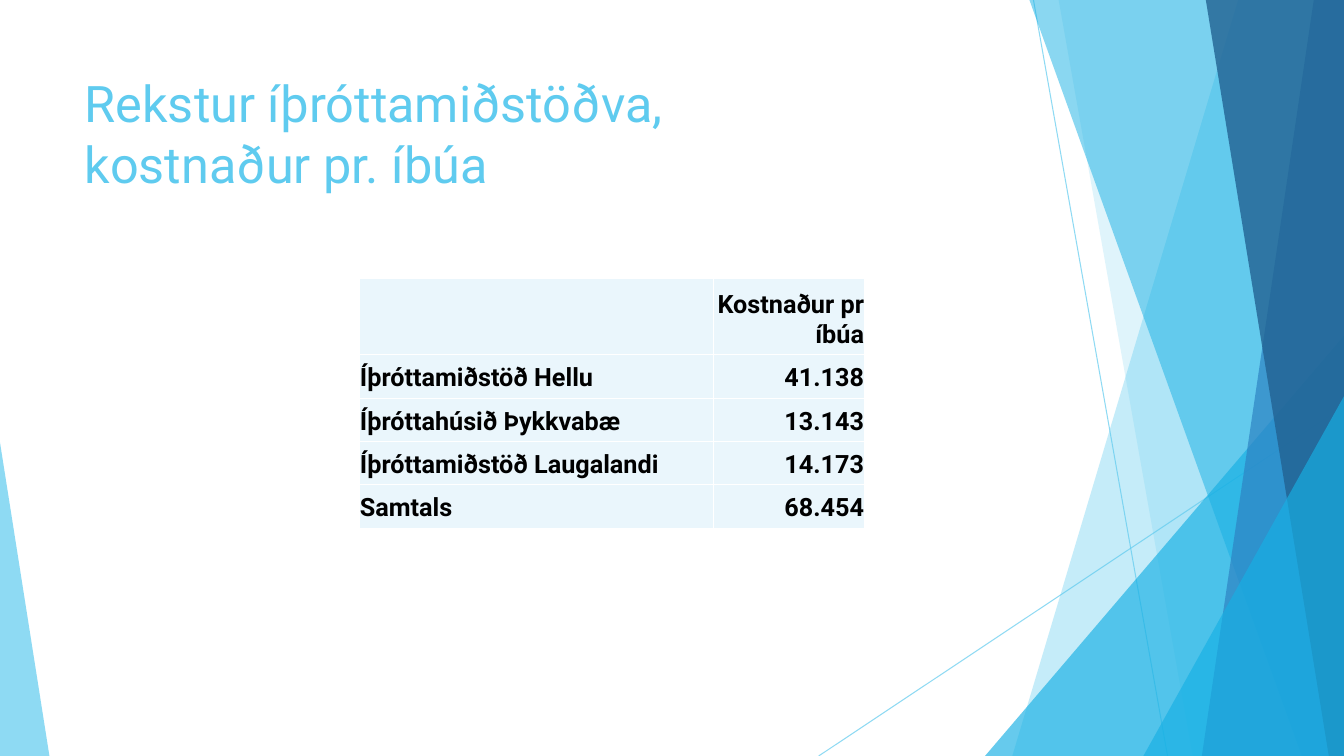
import pptx
import pptx.util
import pptx.dml.color
import pptx.enum.dml
import pptx.enum.shapes
import pptx.enum.text
import pptx.oxml
import pptx.oxml.ns
import lxml.etree

Inches = pptx.util.Inches
RGB = pptx.dml.color.RGBColor.from_string
ALIGN = pptx.enum.text.PP_ALIGN
ANCHOR = pptx.enum.text.MSO_ANCHOR
qn = pptx.oxml.ns.qn

COLORS = {
    "sky": "5FCBEF",
    "cyan": "17B0E4",
    "blue": "2E83C3",
    "navy": "226292",
    "cell": "EAF6FC",
    "white": "FFFFFF",
    "black": "000000",
}


def write(frame, text, size=18, color="black", bold=False, align=ALIGN.LEFT):
    frame.text = text
    for paragraph in frame.paragraphs:
        paragraph.alignment = align
        for run in paragraph.runs:
            run.font.name = "Roboto"
            run.font.size = pptx.util.Pt(size)
            run.font.bold = bold
            run.font.color.rgb = RGB(COLORS[color])


def tint(fill_parent, color, opacity):
    fill_parent.fill.solid()
    fill_parent.fill.fore_color.rgb = RGB(COLORS[color])
    element = fill_parent.fill._xPr.find(qn("a:solidFill"))[0]
    lxml.etree.SubElement(element, qn("a:alpha"), val=str(opacity * 1000))


deck = pptx.Presentation()
deck.slide_width = Inches(13.33)
deck.slide_height = Inches(7.5)
slide = deck.slides.add_slide(deck.slide_layouts[5])
shapes = slide.shapes

for x1, y1, x2, y2 in [(10.25, 0, 11.58, 7.5), (13.33, 4.03, 8.12, 7.5)]:
    ray = shapes.add_connector(
        pptx.enum.shapes.MSO_CONNECTOR.STRAIGHT,
        Inches(x1), Inches(y1), Inches(x2), Inches(y2))
    ray.line.width = pptx.util.Pt(0.75)
    tint(ray.line, "sky", 70)
    lxml.etree.SubElement(ray._element.spPr, qn("a:effectLst"))

facets = [
    ("band", 12.28, 10.04, "sky", 36),
    ("band", 10.5, 11.83, "sky", 20),
    ("triangle", (9.77, 3.33, 3.56, 4.17), 1, "cyan", 66),
    ("band", 10.21, 12.91, "cyan", 50),
    ("band", 13.03, 11.92, "blue", 70),
    ("band", 11.96, 13.18, "navy", 80),
    ("triangle", (11.34, 3.93, 1.99, 3.57), 1, "cyan", 66),
    ("triangle", (0, 4.39, 0.49, 3.11), 0, "sky", 70),
]
for kind, place, end, color, opacity in facets:
    if kind == "band":
        outline = shapes.build_freeform(Inches(place), 0)
        corners = [(13.33, 0), (13.33, 7.5), (end, 7.5)]
        outline.add_line_segments([(Inches(x), Inches(y)) for x, y in corners])
        facet = outline.convert_to_shape()
    else:
        facet = shapes.add_shape(
            pptx.enum.shapes.MSO_SHAPE.ISOSCELES_TRIANGLE,
            *[Inches(length) for length in place])
        facet.adjustments[0] = end
    tint(facet, color, opacity)
    facet.line.fill.background()
    facet.shadow.inherit = False

title = shapes.title
title.left, title.top = Inches(0.74), Inches(0.67)
title.width, title.height = Inches(9.4), Inches(1.44)
title.text_frame.vertical_anchor = ANCHOR.TOP
title.text_frame.word_wrap = True
write(title.text_frame, "Rekstur íþróttamiðstöðva, \vkostnaður pr. íbúa",
      size=36, color="sky")

costs = [
    ("", "Kostnaður pr íbúa"),
    ("Íþróttamiðstöð Hellu", "41.138"),
    ("Íþróttahúsið Þykkvabæ", "13.143"),
    ("Íþróttamiðstöð Laugalandi", "14.173"),
    ("Samtals", "68.454"),
]
cost_table = shapes.add_table(
    len(costs), 2, Inches(3.56), Inches(2.76), Inches(5.02), Inches(2.48)).table
cost_table.columns[0].width = Inches(3.52)
cost_table.columns[1].width = Inches(1.5)
for row, values in enumerate(costs):
    cost_table.rows[row].height = Inches(0.43 if row else 0.76)
    for column, value in enumerate(values):
        cell = cost_table.cell(row, column)
        cell.margin_left = cell.margin_top = cell.margin_right = Inches(0.01)
        cell.margin_bottom = Inches(0.05)
        cell.vertical_anchor = ANCHOR.BOTTOM
        write(cell.text_frame, value, bold=True,
              align=ALIGN.RIGHT if column else ALIGN.LEFT)
        properties = cell._tc.get_or_add_tcPr()
        for side in ("lnL", "lnR", "lnT", "lnB"):
            border = lxml.etree.SubElement(properties, qn("a:" + side), w="12700")
            paint = lxml.etree.SubElement(border, qn("a:solidFill"))
            lxml.etree.SubElement(paint, qn("a:srgbClr"), val=COLORS["white"])
        cell.fill.solid()
        cell.fill.fore_color.rgb = RGB(COLORS["cell"])

deck.save("out.pptx")
